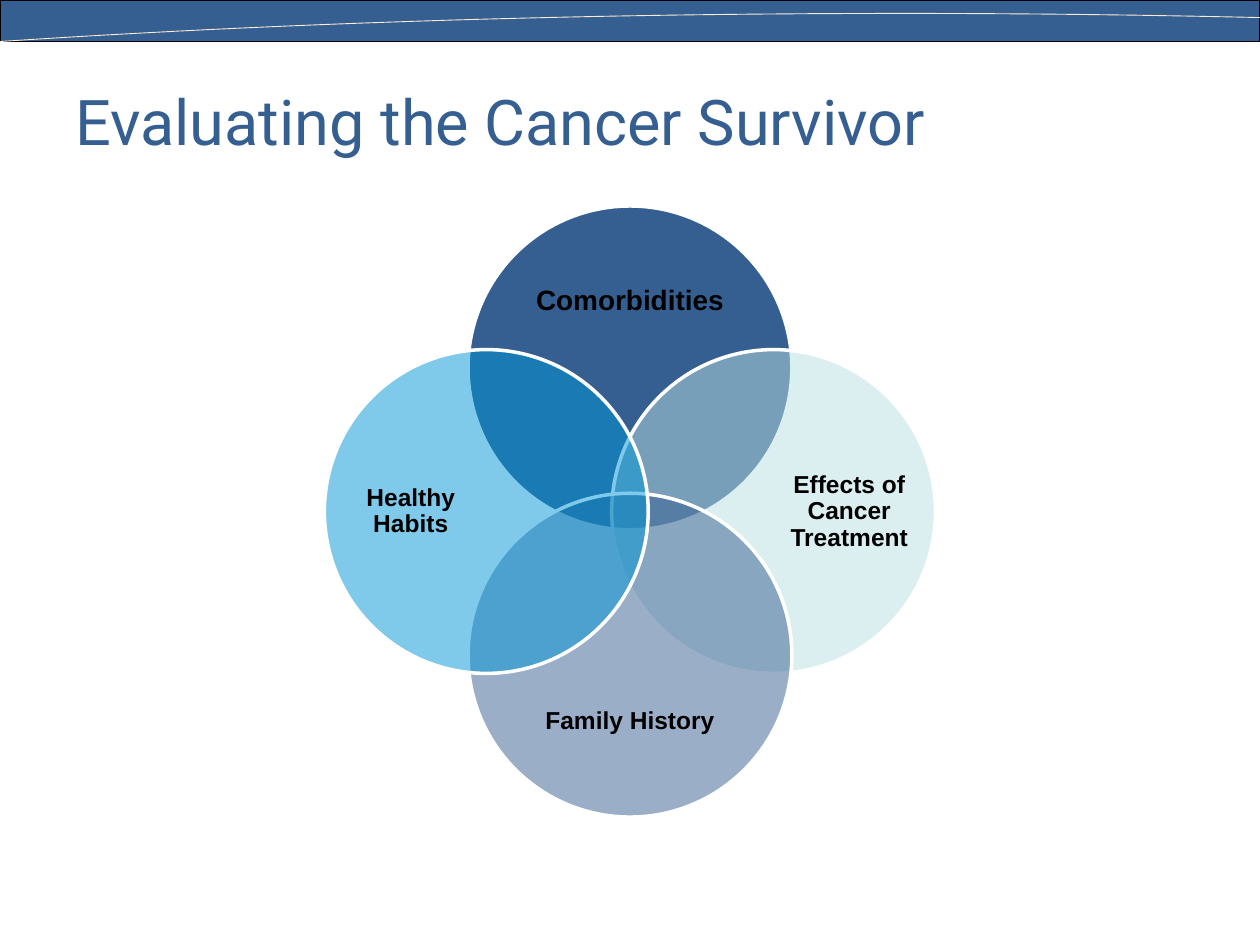
"""Build a slide with a four-circle Venn diagram on evaluating the cancer survivor."""
from lxml.etree import SubElement
from pptx import Presentation
from pptx.dml.color import RGBColor
from pptx.enum.shapes import MSO_SHAPE as Shape
from pptx.enum.text import MSO_ANCHOR as Anchor, PP_ALIGN as Align
from pptx.oxml.ns import qn
from pptx.util import Inches, Pt

TITLE = "Evaluating the Cancer Survivor"
CIRCLES = [
    {"label": "Comorbidities", "way": (0, -1), "fill": "navy", "alpha": 100, "size": "lead"},
    {"label": "Effects of Cancer Treatment", "way": (1, 0), "fill": "mint", "alpha": 50, "size": "label"},
    {"label": "Family History", "way": (0, 1), "fill": "navy", "alpha": 50, "size": "label"},
    {"label": "Healthy Habits", "way": (-1, 0), "fill": "sky", "alpha": 50, "size": "label"},
]
THEME = {
    "colors": {"navy": "365F91", "mint": "BBE0E3", "sky": "0096D6",
               "white": "FFFFFF", "black": "000000", "cream": "FFEAD5"},
    "sizes": {"title": 36, "lead": 16, "label": 14},
    "fonts": {"title": "Roboto", "label": "Arial"},
}
WIDTH, HEIGHT = 10, 7.5
BAND = 0.33
CENTER = (WIDTH / 2, 4.06)
DIAMETER = 0.257 * WIDTH
SHIFT = 0.114 * WIDTH
SWOOSH = [(WIDTH, 0.14), (7.44, 0.08), (3.79, 0.08), (0, BAND)]
STEPS = 40


def color(name):
    return RGBColor.from_string(THEME["colors"][name])


def apply(target, values):
    for name, value in values.items():
        setattr(target, name, value)


def bezier(points, t):
    weights = ((1 - t) ** 3, 3 * t * (1 - t) ** 2, 3 * t * t * (1 - t), t ** 3)
    return tuple(sum(w * point[axis] for w, point in zip(weights, points)) for axis in (0, 1))


def outline(shape, name, width):
    shape.shadow.inherit = False
    shape.line.color.rgb = color(name)
    shape.line.width = Pt(width)


def add_filled(page, kind, area, fill, line, width, alpha=100):
    shape = page.shapes.add_shape(kind, *map(Inches, area))
    shape.fill.solid()
    shape.fill.fore_color.rgb = color(fill)
    outline(shape, line, width)
    if alpha < 100:
        tint = shape.fill._xPr.find(".//" + qn("a:srgbClr"))
        SubElement(tint, qn("a:alpha")).set("val", str(alpha * 1000))


def add_text(page, area, text, frame_format, para_format, font_format, ink):
    box = page.shapes.add_textbox(*map(Inches, area))
    apply(box.text_frame, {"word_wrap": True, "vertical_anchor": Anchor.MIDDLE, **frame_format})
    para = box.text_frame.paragraphs[0]
    apply(para, para_format)
    span = para.add_run()
    span.text = text
    apply(span.font, font_format)
    span.font.color.rgb = color(ink)


def add_header(page):
    add_filled(page, Shape.RECTANGLE, (0, 0, WIDTH, BAND), "navy", "black", 0.75)
    points = [tuple(map(Inches, bezier(SWOOSH, step / STEPS))) for step in range(STEPS + 1)]
    builder = page.shapes.build_freeform(*points[0])
    builder.add_line_segments(points[1:], close=False)
    curve = builder.convert_to_shape()
    curve.fill.background()
    outline(curve, "cream", 0.5)
    font = {"name": THEME["fonts"]["title"], "size": Pt(THEME["sizes"]["title"])}
    add_text(page, (0.05 * WIDTH, BAND, 0.9 * WIDTH, HEIGHT / 6), TITLE, {}, {}, font, "navy")


def add_circle(page, circle):
    across, down = circle["way"]
    middle = [c + SHIFT * way for c, way in zip(CENTER, circle["way"])]
    corner = [m - DIAMETER / 2 for m in middle]
    add_filled(page, Shape.OVAL, (*corner, DIAMETER, DIAMETER),
               circle["fill"], "white", 2, circle["alpha"])
    wide, tall = (0.99, 1.98) if across else (1.98, 0.82)
    left = middle[0] + 0.6 * across - wide / 2
    top = middle[1] + 0.53 * down - tall / 2
    margins = {f"margin_{side}": 0 for side in ("left", "top", "right", "bottom")}
    para = {"alignment": Align.CENTER, "line_spacing": 0.9}
    font = {"name": THEME["fonts"]["label"], "size": Pt(THEME["sizes"][circle["size"]]), "bold": True}
    add_text(page, (left, top, wide, tall), circle["label"], margins, para, font, "black")


def main():
    deck = Presentation()
    apply(deck, {"slide_width": Inches(WIDTH), "slide_height": Inches(HEIGHT)})
    page = deck.slides.add_slide(deck.slide_layouts[6])
    add_header(page)
    for circle in CIRCLES:
        add_circle(page, circle)
    deck.save("out.pptx")


if __name__ == "__main__":
    main()
